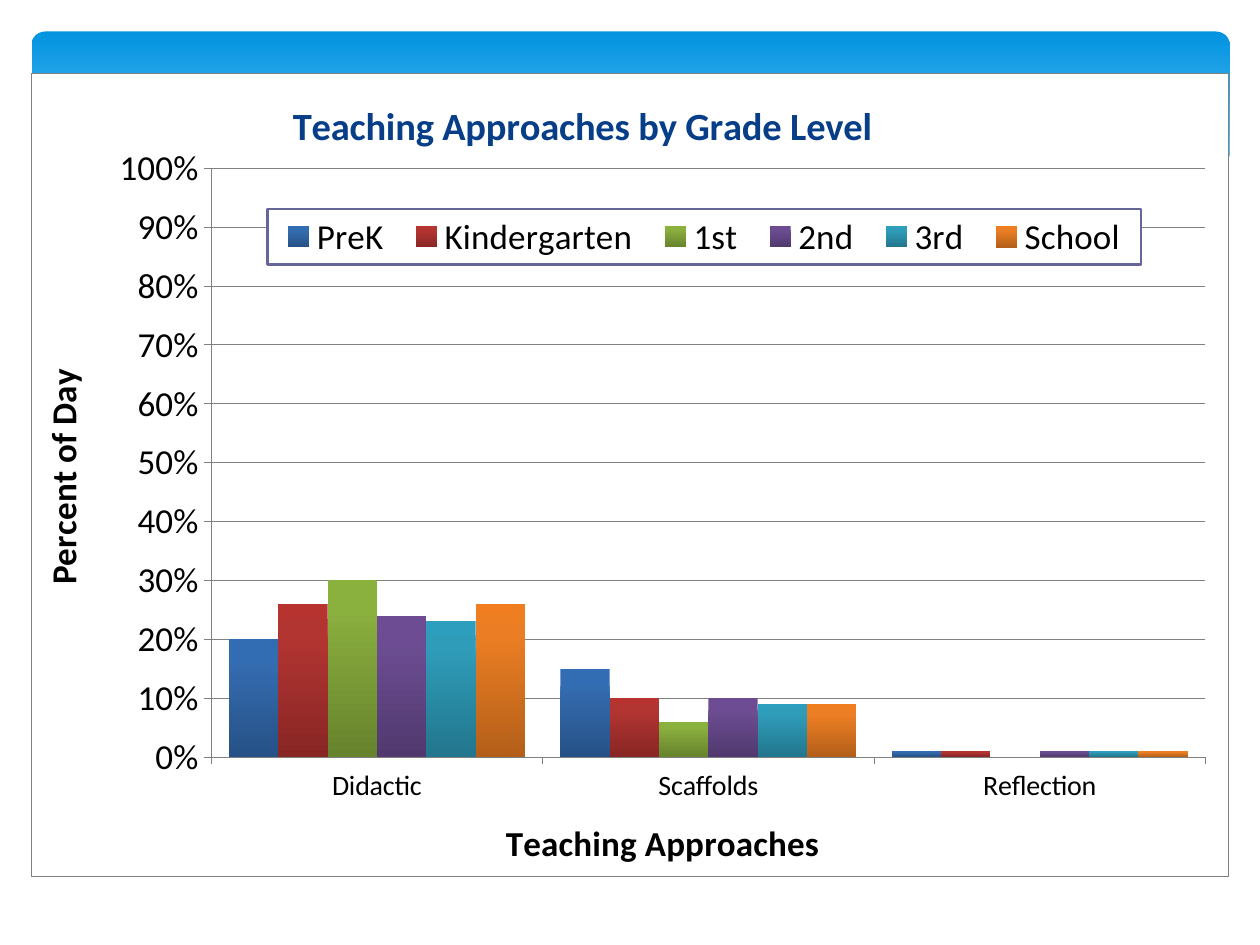
from dataclasses import dataclass

from lxml import etree
from pptx import Presentation, util as u
from pptx.chart.data import CategoryChartData
from pptx.dml.color import RGBColor
from pptx.enum import chart as ch, shapes
from pptx.oxml import parse_xml
from pptx.oxml.ns import nsdecls, qn

FONT = "Calibri"
GREY = "808080"
WAVE = [(9.77, 1.41), (9.3, 1.57), (8.75, 1.67), (8.09, 1.71), (7.44, 1.68),
        (6.68, 1.6), (5.79, 1.44), (4.47, 1.14), (3.4, 0.92), (2.5, 0.81),
        (1.77, 0.78), (1.06, 0.83), (0.52, 0.96), (0.23, 1.07),
        (0.23, 2.24), (9.77, 2.24)]


@dataclass
class Grade:
    name: str
    vals: tuple
    stops: tuple


def blend(top: str, near: str, low: str) -> tuple:
    return (0, top), (20, near), (100, low)


GRADES = [
    Grade("PreK", (0.2, 0.15, 0.01), blend("326DB3", "346CB0", "265186")),
    Grade("Kindergarten", (0.26, 0.1, 0.01), blend("B73330", "B33532", "882624")),
    Grade("1st", (0.3, 0.06, 0), blend("8AB03D", "89AD3E", "67832D")),
    Grade("2nd", (0.24, 0.1, 0.01), blend("6D4C94", "6C4D92", "51396F")),
    Grade("3rd", (0.23, 0.09, 0.01), blend("2D9EBD", "2F9CB9", "22768D")),
    Grade("School", (0.26, 0.09, 0.01), blend("F07E20", "EB7E24", "B45F19")),
]


def color(code: str) -> RGBColor:
    return RGBColor.from_string(code)


def shade(fill, root, stops: tuple) -> None:
    """Fill with a gradient that runs from top to bottom."""
    fill.gradient()
    fill.gradient_angle = 270
    group = root.find(".//" + qn("a:gsLst"))
    for old in list(group):
        group.remove(old)
    for spot, code in stops:
        stop = etree.SubElement(group, qn("a:gs"), pos=str(spot * 1000))
        etree.SubElement(stop, qn("a:srgbClr"), val=code)


def style(font, size: float, code: str = "000000", bold: bool = False) -> None:
    font.name, font.size, font.bold = FONT, u.Pt(size), bold
    font.color.rgb = color(code)


def rule(line, code: str = GREY, width: float = 0.25) -> None:
    line.color.rgb = color(code)
    line.width = u.Pt(width)


def write(title, words: str, **form) -> None:
    frame = title.text_frame
    frame.text = words
    style(frame.paragraphs[0].runs[0].font, **form)


def place(part, after: str, x: float, y: float, w: float = 0, h: float = 0,
          inner: bool = False) -> None:
    """Set a chart part's layout in percent of the chart."""
    for old in part.findall(qn("c:layout")):
        part.remove(old)
    layout = etree.Element(qn("c:layout"))
    manual = etree.SubElement(layout, qn("c:manualLayout"))
    items = [("layoutTarget", "inner")] if inner else []
    items += [("xMode", "edge"), ("yMode", "edge")]
    sizes = [("x", x), ("y", y)] + ([("w", w), ("h", h)] if w else [])
    items += [(tag, round(val / 100, 4)) for tag, val in sizes]
    for tag, val in items:
        etree.SubElement(manual, qn("c:" + tag), val=str(val))
    if after:
        part.find(qn(after)).addnext(layout)
    else:
        part.insert(0, layout)


def panel(code: str = "", width: float = 0):
    """Make white shape properties, with a border if a colour is given."""
    edge = f'<a:solidFill><a:srgbClr val="{code}"/></a:solidFill>' if code else "<a:noFill/>"
    return parse_xml(
        f'<c:spPr {nsdecls("c", "a")}><a:solidFill><a:srgbClr val="FFFFFF"/></a:solidFill>'
        f'<a:ln w="{int(u.Pt(width))}">{edge}</a:ln></c:spPr>')


def draw_band(slide) -> None:
    band = slide.shapes.add_shape(
        shapes.MSO_SHAPE.ROUNDED_RECTANGLE,
        u.Inches(0.25), u.Inches(0.25), u.Inches(9.51), u.Inches(1.56))
    band.adjustments[0] = 0.07
    shade(band.fill, band._element.spPr, ((0, "0293E0"), (90, "83D3FE")))
    pen = slide.shapes.build_freeform(*WAVE[0], scale=u.Inches(1))
    pen.add_line_segments(WAVE[1:])
    wave = pen.convert_to_shape()
    wave.fill.solid()
    wave.fill.fore_color.rgb = color("FFFFFF")
    for shape in (band, wave):
        shape.shadow.inherit = False
        shape.line.fill.background()


def draw_axis(axis, words: str, size: float, x: float, y: float) -> None:
    write(axis.axis_title, words, size=20, bold=True)
    place(axis.axis_title._element, "c:tx", x, y)
    style(axis.tick_labels.font, size)
    axis.major_tick_mark = ch.XL_TICK_MARK.OUTSIDE
    rule(axis.format.line)


def draw_key(chart) -> None:
    chart.has_legend = True
    key = chart.legend
    key.position = ch.XL_LEGEND_POSITION.RIGHT
    key.include_in_layout = True
    style(key.font, 20)
    place(key._element, "c:legendPos", 19.7, 16.9, 73, 6.9)
    key._element.find(qn("c:overlay")).addnext(panel("666699", 1.5))


def draw_chart(slide) -> None:
    data = CategoryChartData(number_format="0%")
    data.categories = ["Didactic", "Scaffolds", "Reflection"]
    for grade in GRADES:
        data.add_series(grade.name, grade.vals)
    chart = slide.shapes.add_chart(
        ch.XL_CHART_TYPE.COLUMN_CLUSTERED, u.Inches(0.25), u.Inches(0.58),
        u.Inches(9.5), u.Inches(6.38), data).chart
    style(chart.font, 10)
    chart.has_title = True
    write(chart.chart_title, "Teaching Approaches by Grade Level",
          size=22, code="073E87", bold=True)
    place(chart.chart_title._element, "c:tx", 21.25, 2.3)

    plot = chart.plots[0]
    plot.gap_width, plot.overlap = 72, 0
    plot.vary_by_categories = False
    for bars, grade in zip(plot.series, GRADES):
        shade(bars.format.fill, bars._element, grade.stops)

    draw_axis(chart.category_axis, "Teaching Approaches", 16, 39.1, 91.9)
    ticks = chart.value_axis
    draw_axis(ticks, "Percent of Day", 20, 0, 36)
    ticks.minimum_scale, ticks.maximum_scale, ticks.major_unit = 0, 1, 0.1
    ticks.tick_labels.number_format = "0%"
    ticks.tick_labels.number_format_is_linked = False
    rule(ticks.major_gridlines.format.line)
    draw_key(chart)

    space = chart._chartSpace
    area = space.chart.plotArea
    place(area, "", 15, 11.8, 83.1, 73.3, inner=True)
    area.append(panel())
    space.chart.addnext(panel(GREY, 0.25))


def main() -> None:
    deck = Presentation()
    deck.slide_width, deck.slide_height = u.Inches(10), u.Inches(7.5)
    slide = deck.slides.add_slide(deck.slide_layouts[6])
    draw_band(slide)
    draw_chart(slide)
    deck.save("out.pptx")


if __name__ == "__main__":
    main()
